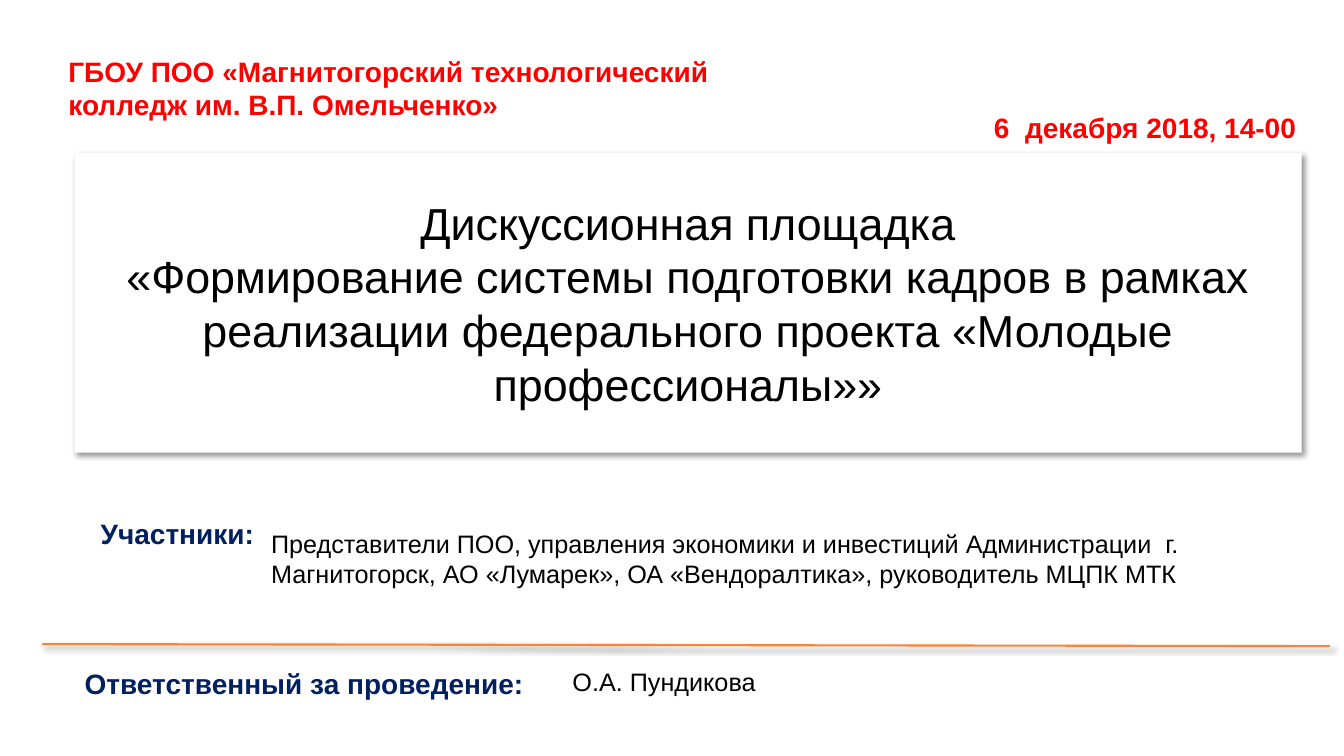
"""Build the opening slide of a discussion forum."""
import pptx
import pptx.dml.color
import pptx.enum.shapes
import pptx.enum.text
import pptx.oxml
import pptx.util
from pptx.util import Inches

COLORS = {"red": "FF0000", "navy": "002060", "black": "000000",
          "white": "FFFFFF", "orange": "FD8231"}
HEAD = {"size": 20, "bold": True}
TITLE = ("Дискуссионная площадка\n«Формирование системы подготовки кадров в рамках "
         "реализации федерального проекта «Молодые профессионалы»»")
TITLE_BOX = (0.74, 1.52, 12.17, 2.97)
RULE = (0.42, 6.39, 13.19, 6.41)
NOTES = [
    (["6  декабря 2018, 14-00"], (9.76, 1.05, 3.22, 0.44), False,
     {"color": "red", **HEAD}),
    (["Представители ПОО, управления экономики и инвестиций Администрации  г. "
      "Магнитогорск, АО «Лумарек», ОА «Вендоралтика», руководитель МЦПК МТК"],
     (2.59, 5.19, 9.97, 0.71), True, {}),
    (["Участники:"], (0.9, 5.07, 1.74, 0.44), False, {"color": "navy", **HEAD}),
    (["Ответственный за проведение:"], (0.74, 6.56, 4.59, 0.44), False,
     {"color": "navy", **HEAD}),
    (["О.А. Пундикова"], (5.58, 6.56, 6.67, 0.4), True, {}),
    (["ГБОУ ПОО «Магнитогорский технологический", "колледж им. В.П. Омельченко»"],
     (0.58, 0.49, 6.67, 0.77), False, {"color": "red", **HEAD}),
]
SHADOW = (
    '<a:effectLst xmlns:a="http://schemas.openxmlformats.org/drawingml/2006/main">'
    '<a:outerShdw blurRad="50800" dist="38100" dir="2700000" algn="tl" rotWithShape="0">'
    '<a:srgbClr val="000000"><a:alpha val="40000"/></a:srgbClr>'
    '</a:outerShdw></a:effectLst>')


def tint(name):
    return pptx.dml.color.RGBColor.from_string(COLORS[name])


def write(frame, lines, size=18, color="black", bold=False, align=None):
    for i, line in enumerate(lines):
        para = frame.add_paragraph() if i else frame.paragraphs[0]
        para.text = line
        para.alignment = align
        for part in (para, *para.runs):
            font = part.font
            font.name, font.bold = "Arial", bold
            font.size = pptx.util.Pt(size)
            font.color.rgb = tint(color)


def shade(shape):
    shape._element.spPr.append(pptx.oxml.parse_xml(SHADOW))


def main():
    deck = pptx.Presentation()
    deck.slide_width, deck.slide_height = Inches(13.33), Inches(7.5)
    slide = deck.slides.add_slide(deck.slide_layouts[0])
    sub = slide.placeholders[1]._element
    sub.getparent().remove(sub)

    title = slide.shapes.title
    title.left, title.top, title.width, title.height = map(Inches, TITLE_BOX)
    title.fill.solid()
    title.fill.fore_color.rgb = tint("white")
    shade(title)
    title.text_frame.vertical_anchor = pptx.enum.text.MSO_ANCHOR.MIDDLE
    write(title.text_frame, [TITLE], size=32, align=pptx.enum.text.PP_ALIGN.CENTER)

    rule = slide.shapes.add_connector(
        pptx.enum.shapes.MSO_CONNECTOR.STRAIGHT, *map(Inches, RULE))
    rule.line.color.rgb = tint("orange")
    rule.line.width = pptx.util.Pt(1.5)
    shade(rule)

    for lines, box, wrap, style in NOTES:
        frame = slide.shapes.add_textbox(*map(Inches, box)).text_frame
        frame.word_wrap = wrap
        frame.auto_size = pptx.enum.text.MSO_AUTO_SIZE.SHAPE_TO_FIT_TEXT
        write(frame, lines, **style)

    deck.save("out.pptx")


if __name__ == "__main__":
    main()
